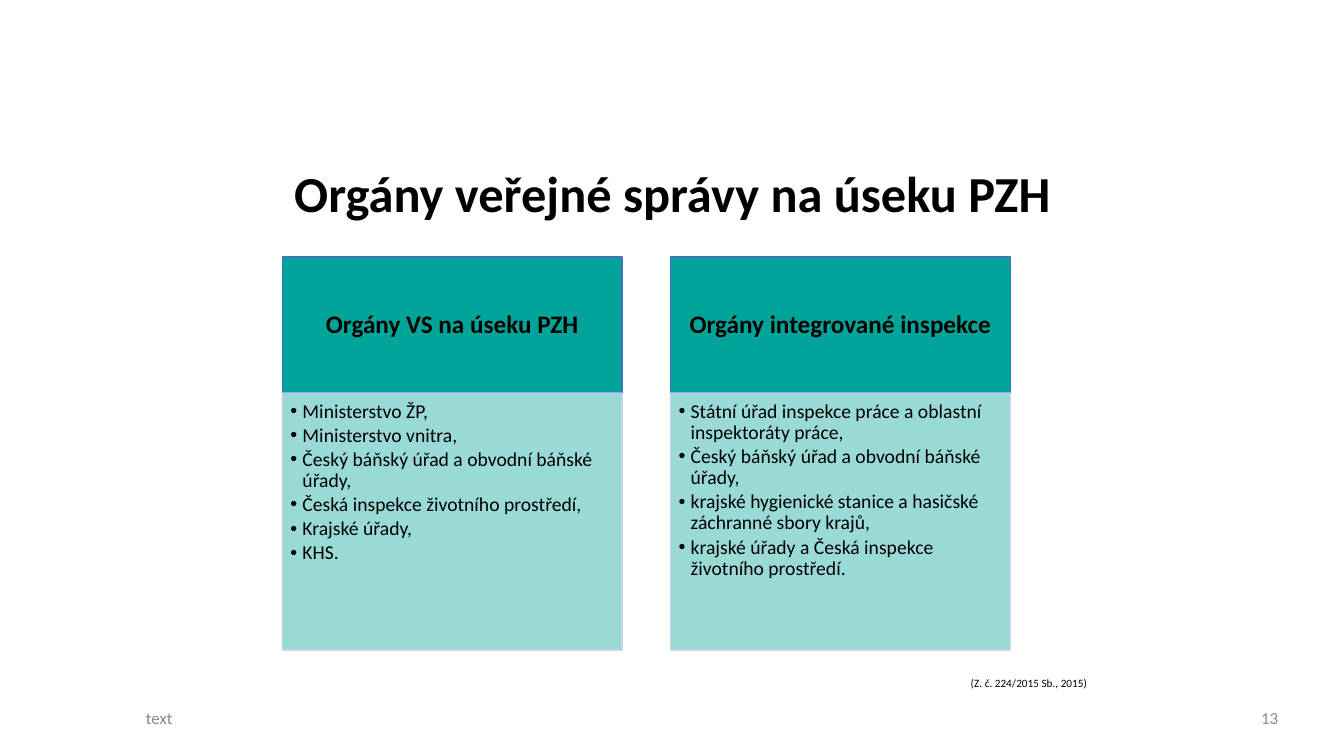
from lxml import etree
from pptx import Presentation
from pptx.dml.color import RGBColor
from pptx.enum.text import MSO_ANCHOR, MSO_AUTO_SIZE, PP_ALIGN
from pptx.oxml.ns import qn
from pptx.util import Inches, Pt

LEFT, CENTER = PP_ALIGN.LEFT, PP_ALIGN.CENTER
TOP, MIDDLE, BOTTOM = MSO_ANCHOR.TOP, MSO_ANCHOR.MIDDLE, MSO_ANCHOR.BOTTOM
NO_AUTOFIT = MSO_AUTO_SIZE.NONE

BLACK = RGBColor(0x00, 0x00, 0x00)
GRAY = RGBColor(0x88, 0x88, 0x88)
TEAL = RGBColor(0x00, 0xA4, 0x99)
BLUE = RGBColor(0x43, 0x72, 0xC3)
PALE_BLUE = RGBColor(0xCC, 0xD3, 0xEA)

SLIDE_WIDTH, SLIDE_HEIGHT = 13.33, 7.5
COMPARISON_LAYOUT = 4
CARD_LEFT, CARD_WIDTH, CARD_PITCH = 2.8, 3.37, 3.85
HEADING_TOP, HEADING_HEIGHT, LIST_HEIGHT = 2.55, 1.35, 2.55
FOOTER_TOP, FOOTER_HEIGHT = 6.95, 0.34
BULLET_INDENT = 0.12

DEFAULT_MARGINS = (0.1, 0.05, 0.1, 0.05)
HEADING_MARGINS = (0.14, 0.08, 0.14, 0.08)
LIST_MARGINS = (0.08, 0.08, 0.11, 0.12)

TITLE_FONT = {"size": Pt(36), "bold": True}
HEADING_FONT = {"size": Pt(18), "bold": True}
LIST_FONT = {"size": Pt(14), "bold": False}
SOURCE_FONT = {"size": Pt(8)}
FOOTER_FONT = {"size": Pt(12)}

CARDS = [
    ("Orgány VS na úseku PZH", [
        "Ministerstvo ŽP,",
        "Ministerstvo vnitra,",
        "Český báňský úřad a obvodní báňské úřady,",
        "Česká inspekce životního prostředí,",
        "Krajské úřady,",
        "KHS.",
    ]),
    ("Orgány integrované inspekce", [
        "Státní úřad inspekce práce a oblastní inspektoráty práce,",
        "Český báňský úřad a obvodní báňské úřady,",
        "krajské hygienické stanice a hasičské záchranné sbory krajů,",
        "krajské úřady a Česká inspekce životního prostředí.",
    ]),
]


def place(shape, left, top, width, height):
    shape.left, shape.top = Inches(left), Inches(top)
    shape.width, shape.height = Inches(width), Inches(height)


def set_frame(shape, margins, anchor):
    frame = shape.text_frame
    frame.word_wrap = True
    frame.auto_size = NO_AUTOFIT
    frame.vertical_anchor = anchor
    for side, margin in zip(("left", "top", "right", "bottom"), margins):
        setattr(frame, f"margin_{side}", Inches(margin))


def write(paragraph, text, font, color=BLACK, align=LEFT, spacing=1.0, before=0):
    paragraph.alignment = align
    paragraph.line_spacing = spacing
    paragraph.space_before = Pt(before)
    run = paragraph.add_run()
    run.text = text
    run.font.name = "Calibri"
    run.font.color.rgb = color
    for name, value in font.items():
        setattr(run.font, name, value)


def add_bullet(paragraph):
    properties = paragraph._p.get_or_add_pPr()
    properties.set("marL", str(Inches(BULLET_INDENT)))
    properties.set("indent", str(-Inches(BULLET_INDENT)))
    bullet_color = etree.SubElement(properties, qn("a:buClr"))
    etree.SubElement(bullet_color, qn("a:srgbClr"), val=str(BLACK))
    etree.SubElement(properties, qn("a:buFont"), typeface="Arial")
    etree.SubElement(properties, qn("a:buChar"), char="•")


def paint(shape, line_color, fill_opacity=100, line_opacity=100):
    """Fill a box with teal and outline it, each at an opacity in percent."""
    shape.fill.solid()
    shape.fill.fore_color.rgb = TEAL
    shape.line.color.rgb = line_color
    shape.line.width = Pt(1)
    properties = shape._element.spPr
    for route, opacity in (("a:solidFill", fill_opacity),
                           ("a:ln/a:solidFill", line_opacity)):
        if opacity < 100:
            color = properties.find(f"{route}/a:srgbClr", properties.nsmap)
            etree.SubElement(color, qn("a:alpha"), val=str(opacity * 1000))


def fill_card(heading, body, column, title, items):
    left = CARD_LEFT + column * CARD_PITCH
    place(heading, left, HEADING_TOP, CARD_WIDTH, HEADING_HEIGHT)
    paint(heading, BLUE)
    set_frame(heading, HEADING_MARGINS, MIDDLE)
    write(heading.text_frame.paragraphs[0], title, HEADING_FONT,
          align=CENTER, spacing=0.9)

    place(body, left, HEADING_TOP + HEADING_HEIGHT, CARD_WIDTH, LIST_HEIGHT)
    paint(body, PALE_BLUE, fill_opacity=40, line_opacity=90)
    set_frame(body, LIST_MARGINS, TOP)
    frame = body.text_frame
    for index, item in enumerate(items):
        paragraph = frame.add_paragraph() if index else frame.paragraphs[0]
        paragraph.level = 1
        add_bullet(paragraph)
        write(paragraph, item, LIST_FONT, spacing=0.9, before=2.1 if index else 0)


def add_label(slide, text, box, font, color, anchor):
    label = slide.shapes.add_textbox(*(Inches(length) for length in box))
    set_frame(label, DEFAULT_MARGINS, anchor)
    write(label.text_frame.paragraphs[0], text, font, color)


def main():
    presentation = Presentation()
    presentation.slide_width = Inches(SLIDE_WIDTH)
    presentation.slide_height = Inches(SLIDE_HEIGHT)
    layout = presentation.slide_layouts[COMPARISON_LAYOUT]
    slide = presentation.slides.add_slide(layout)

    title = slide.shapes.title
    place(title, 0.22, 1.15, 12.9, 1.12)
    set_frame(title, DEFAULT_MARGINS, BOTTOM)
    write(title.text_frame.paragraphs[0], "Orgány veřejné správy na úseku PZH",
          TITLE_FONT, align=CENTER, spacing=0.9)

    boxes = list(slide.placeholders)[1:]
    for column, (heading, items) in enumerate(CARDS):
        fill_card(boxes[2 * column], boxes[2 * column + 1], column, heading, items)

    add_label(slide, "(Z. č. 224/2015 Sb., 2015)", (9.53, 6.66, 2.2, 0.24),
              SOURCE_FONT, BLACK, TOP)
    for text, left, width in (("text", 1.35, 10.87), ("13", 12.41, 0.67)):
        add_label(slide, text, (left, FOOTER_TOP, width, FOOTER_HEIGHT),
                  FOOTER_FONT, GRAY, MIDDLE)

    presentation.save("out.pptx")


if __name__ == "__main__":
    main()
